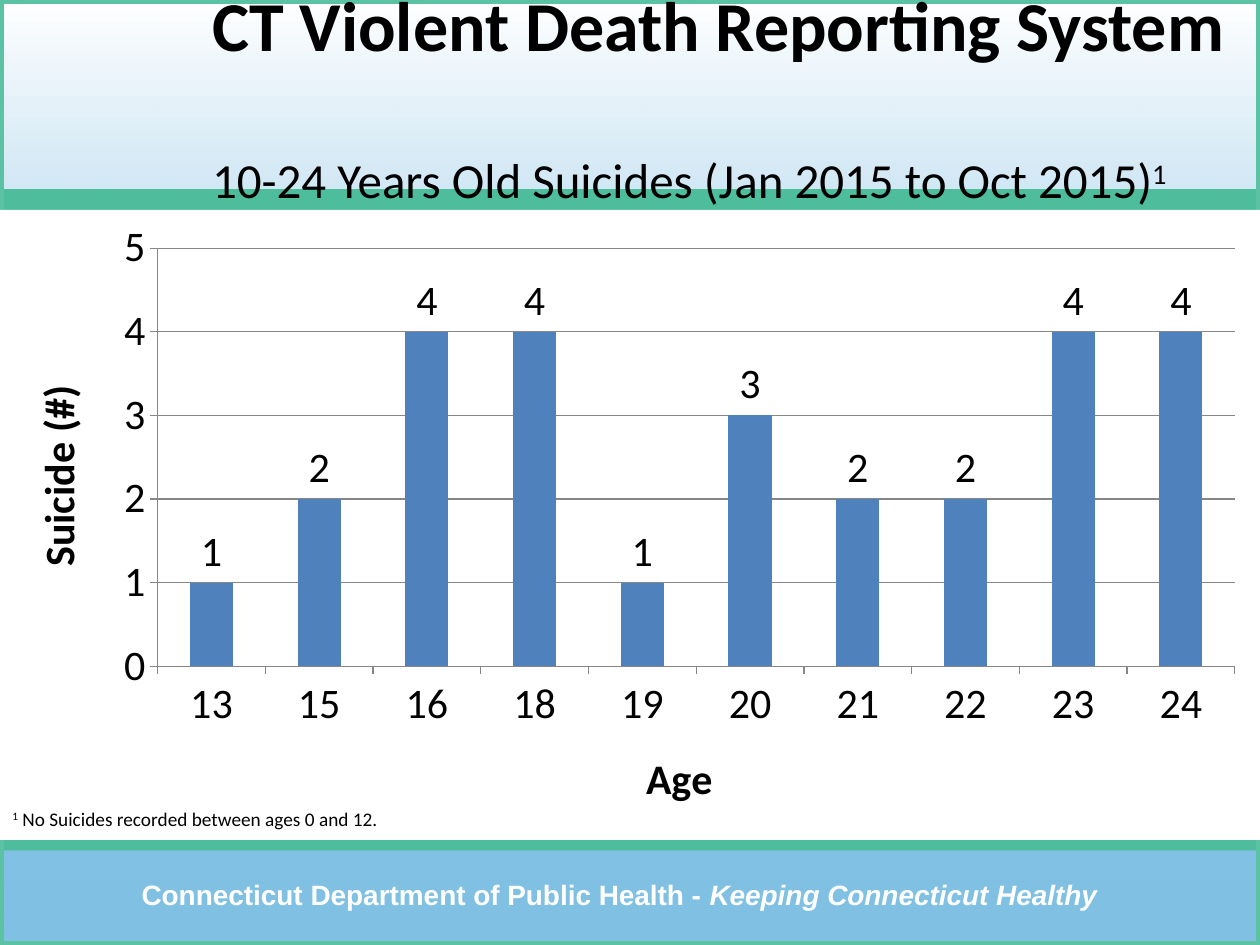
"""Build the slide on suicides by age from the CT Violent Death Reporting System."""
from lxml import etree
from pptx import Presentation
from pptx.chart.data import CategoryChartData
from pptx.dml.color import RGBColor
from pptx.enum import chart as ch, shapes, text
from pptx.oxml import parse_xml
from pptx.oxml.ns import nsdecls, qn
from pptx.util import Pt

TITLE = "CT Violent Death Reporting System"
SUBTITLE = "10-24 Years Old Suicides (Jan 2015 to Oct 2015)"
NOTE_MARK = "1"
NOTE = " No Suicides recorded between ages 0 and 12."
FOOTER = ("Connecticut Department of Public Health - ", "Keeping Connecticut Healthy")
AGES = ["13", "15", "16", "18", "19", "20", "21", "22", "23", "24"]
SUICIDES = [1, 2, 4, 4, 1, 3, 2, 2, 4, 4]
AXIS_TITLES = {"category_axis": "Age", "value_axis": "Suicide (#)"}

THEME = {
    "font": "Calibri", "footer_font": "Arial",
    "ink": "000000", "paper": "FFFFFF", "sky": "0082C8", "band": "4DBD9C",
    "frame": "5BC2A4", "bar": "4F81BD", "grid": "868686",
    "title": 40, "subtitle": 28, "chart": 24, "footer": 16, "note": 11,
}
W, H = 720, 540
BANDS = [(480, 6), (108, 12)]
TITLE_BOX = (114, 1.5, 599, 106)
CHART_BOX = (0, 120, W, 360)
NOTE_BOX = (0, 450, W, 36)
FOOTER_BOX = (36, 498, 636, 27)


def rgb(name):
    return RGBColor.from_string(THEME[name])


def box(*lengths):
    return [Pt(v) for v in lengths]


def style(font, size, color="ink", face="font", bold=False, italic=False):
    font.name, font.size = THEME[face], Pt(THEME[size])
    font.color.rgb = rgb(color)
    font.bold, font.italic = bold, italic


def add_run(p, words, size, raised=False, **look):
    r = p.add_run()
    r.text = words
    style(r.font, size, **look)
    if raised:
        r.font._element.set("baseline", "30000")


def add_rect(s, *lengths, fill=None):
    sp = s.shapes.add_shape(shapes.MSO_SHAPE.RECTANGLE, *box(*lengths))
    sp.shadow.inherit = False
    sp.line.fill.background()
    if fill:
        sp.fill.solid()
        sp.fill.fore_color.rgb = rgb(fill)
    else:
        sp.fill.background()
    return sp


def add_text(s, lengths, anchor):
    tf = s.shapes.add_textbox(*box(*lengths)).text_frame
    tf.word_wrap = True
    tf.vertical_anchor = anchor
    return tf.paragraphs[0]


def add_backdrop(s):
    sky = add_rect(s, 0, 0, W, H)
    fill = parse_xml(
        f'<a:gradFill {nsdecls("a")} rotWithShape="1"><a:gsLst>'
        f'<a:gs pos="0"><a:srgbClr val="{THEME["sky"]}"><a:alpha val="50000"/></a:srgbClr></a:gs>'
        f'<a:gs pos="100000"><a:srgbClr val="{THEME["paper"]}"/></a:gs>'
        '</a:gsLst><a:lin ang="16200000" scaled="0"/></a:gradFill>')
    props = sky._element.spPr
    props.replace(props.find(qn("a:noFill")), fill)
    for top, height in BANDS:
        add_rect(s, 0, top, W, height, fill="band")
    p = add_text(s, FOOTER_BOX, text.MSO_ANCHOR.TOP)
    p.alignment = text.PP_ALIGN.CENTER
    for words, italic in zip(FOOTER, (False, True)):
        add_run(p, words, "footer", color="paper", face="footer_font", bold=True, italic=italic)
    frame = add_rect(s, 0, 0, W, H)
    frame.line.color.rgb = rgb("frame")
    frame.line.width = Pt(4.5)


def add_title(s):
    sp = s.shapes.title
    s.shapes._spTree.append(sp._element)
    sp.left, sp.top, sp.width, sp.height = box(*TITLE_BOX)
    tf = sp.text_frame
    tf.word_wrap = True
    tf.auto_size = text.MSO_AUTO_SIZE.NONE
    tf.vertical_anchor = text.MSO_ANCHOR.MIDDLE
    p = tf.paragraphs[0]
    p.alignment = text.PP_ALIGN.LEFT
    add_run(p, TITLE, "title", bold=True)
    for _ in range(2):
        p.add_line_break()
        mark = etree.SubElement(p._p.findall(qn("a:br"))[-1], qn("a:rPr"))
        mark.set("sz", str(THEME["title"] * 100))
    add_run(p, SUBTITLE, "subtitle")
    add_run(p, NOTE_MARK, "subtitle", raised=True)


def add_chart(s):
    data = CategoryChartData()
    data.categories = AGES
    data.add_series("Series 1", SUICIDES)
    kind = ch.XL_CHART_TYPE.COLUMN_CLUSTERED
    chart = s.shapes.add_chart(kind, *box(*CHART_BOX), data).chart
    chart.has_legend = chart.has_title = False
    style(chart.font, "chart")
    chart._chartSpace.chart.addnext(parse_xml(
        f'<c:spPr {nsdecls("c", "a")}><a:solidFill><a:srgbClr val="{THEME["paper"]}"/>'
        '</a:solidFill><a:ln><a:noFill/></a:ln></c:spPr>'))
    for name, words in AXIS_TITLES.items():
        axis = getattr(chart, name)
        axis.major_tick_mark = ch.XL_TICK_MARK.OUTSIDE
        axis.format.line.color.rgb = rgb("grid")
        add_run(axis.axis_title.text_frame.paragraphs[0], words, "chart", bold=True)
    values = chart.value_axis
    values.minimum_scale, values.maximum_scale, values.major_unit = 0, 5, 1
    values.major_gridlines.format.line.color.rgb = rgb("grid")
    plot = chart.plots[0]
    plot.gap_width, plot.vary_by_categories = 150, False
    series = plot.series[0]
    series.format.fill.solid()
    series.format.fill.fore_color.rgb = rgb("bar")
    labels = series.data_labels
    labels.show_value = True
    labels.position = ch.XL_LABEL_POSITION.OUTSIDE_END
    style(labels.font, "chart")


def add_note(s):
    p = add_text(s, NOTE_BOX, text.MSO_ANCHOR.MIDDLE)
    add_run(p, NOTE_MARK, "note", raised=True)
    add_run(p, NOTE, "note")


def main():
    prs = Presentation()
    prs.slide_width, prs.slide_height = Pt(W), Pt(H)
    s = prs.slides.add_slide(prs.slide_layouts[5])
    add_backdrop(s)
    add_title(s)
    add_chart(s)
    add_note(s)
    prs.save("out.pptx")


if __name__ == "__main__":
    main()
